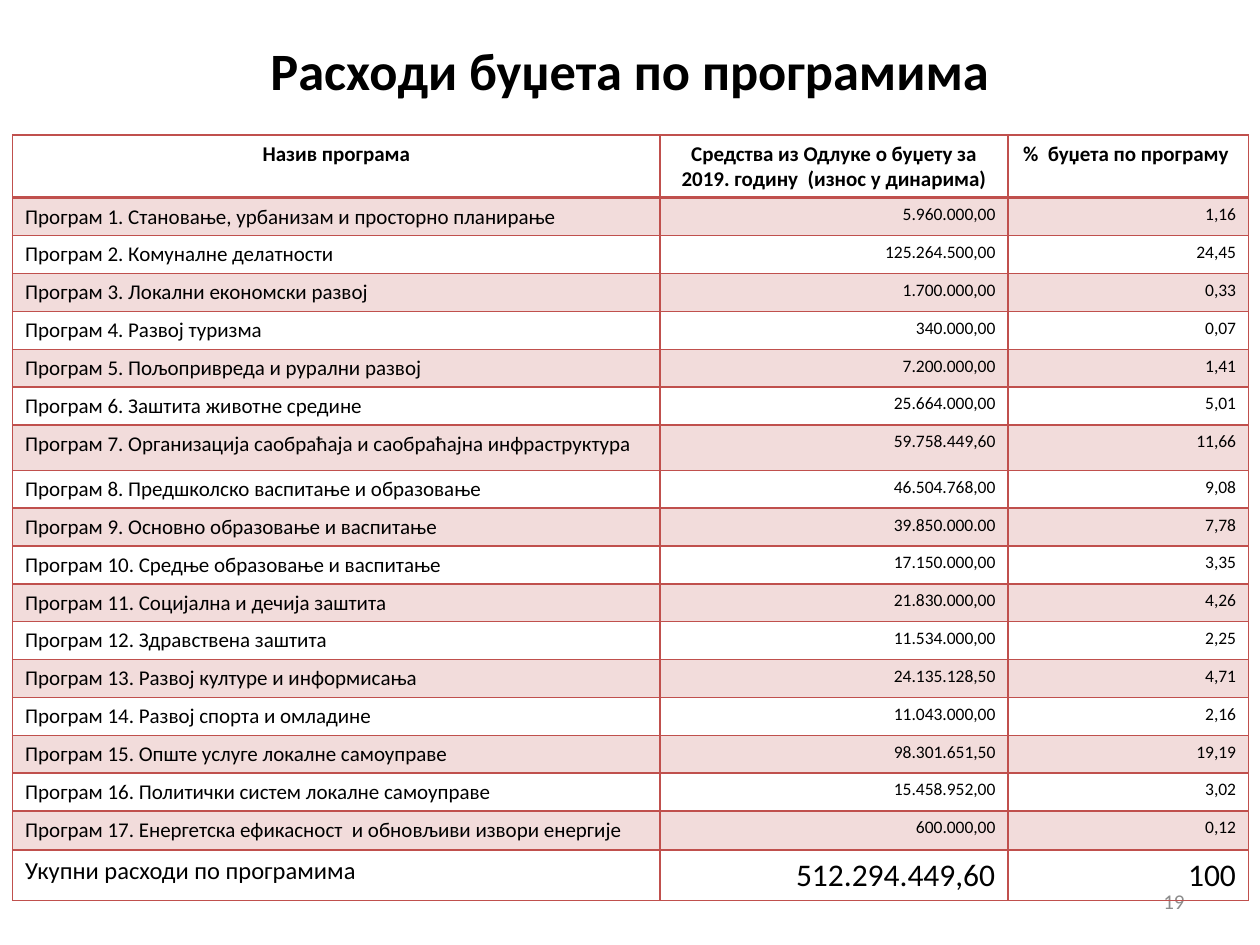
from lxml import etree
from pptx import Presentation
from pptx.dml.color import RGBColor
from pptx.enum.text import MSO_ANCHOR, PP_ALIGN
from pptx.oxml.ns import qn
from pptx.util import Inches, Pt

LEFT, CENTER, RIGHT = PP_ALIGN.LEFT, PP_ALIGN.CENTER, PP_ALIGN.RIGHT
MIDDLE = MSO_ANCHOR.MIDDLE
TITLE_ONLY = 5

FONT = "Calibri"
BLACK = RGBColor(0x00, 0x00, 0x00)
GRAY = RGBColor(0x8C, 0x8C, 0x8C)
RED = RGBColor(0xC0, 0x50, 0x4D)
BAND_OPACITY = 20

COLUMN_WIDTHS = (5.14, 2.76, 1.91)
ROW_HEIGHTS = [0.49] + [0.29] * 6 + [0.36] + [0.29] * 9 + [0.31, 0.39]

HEADINGS = (
    "Назив програма",
    "Средства из Одлуке о буџету за 2019. годину  (износ у динарима)",
    "%  буџета по програму ",
)
PROGRAMS = (
    ("Становање, урбанизам и просторно планирање", "5.960.000,00", "1,16"),
    ("Комуналне делатности", "125.264.500,00", "24,45"),
    ("Локални економски развој", "1.700.000,00", "0,33"),
    ("Развој туризма", "340.000,00", "0,07"),
    ("Пољопривреда и рурални развој", "7.200.000,00", "1,41"),
    ("Заштита животне средине", "25.664.000,00", "5,01"),
    ("Организација саобраћаја и саобраћајна инфраструктура", "59.758.449,60", "11,66"),
    ("Предшколско васпитање и образовање", "46.504.768,00", "9,08"),
    ("Основно образовање и васпитање", "39.850.000.00", "7,78"),
    ("Средње образовање и васпитање", "17.150.000,00", "3,35"),
    ("Социјална и дечија заштита", "21.830.000,00", "4,26"),
    ("Здравствена заштита", "11.534.000,00", "2,25"),
    ("Развој културе и информисања", "24.135.128,50", "4,71"),
    ("Развој спорта и омладине", "11.043.000,00", "2,16"),
    ("Опште услуге локалне самоуправе", "98.301.651,50", "19,19"),
    ("Политички систем локалне самоуправе", "15.458.952,00", "3,02"),
    ("Енергетска ефикасност  и обновљиви извори енергије", "600.000,00", "0,12"),
)
TOTALS = ("Укупни расходи по програмима", "512.294.449,60", "100")


def write_text(frame, text, size, align, color=BLACK, bold=False):
    """Fill a text frame with one formatted paragraph."""
    frame.text = text
    paragraph = frame.paragraphs[0]
    paragraph.alignment = align
    font = paragraph.font
    font.name, font.size, font.bold = FONT, Pt(size), bold
    font.color.rgb = color


def add_title(slide, text):
    """Place the slide heading in the title placeholder."""
    title = slide.shapes.title
    title.left, title.top = Inches(0.74), Inches(0.13)
    title.width, title.height = Inches(8.52), Inches(0.85)
    title.text_frame.vertical_anchor = MIDDLE
    write_text(title.text_frame, text, 30, CENTER, bold=True)


def add_page_number(slide, number):
    """Add the gray page number at the lower right."""
    box = slide.shapes.add_textbox(Inches(7.17), Inches(6.95), Inches(2.33), Inches(0.4))
    box.text_frame.word_wrap = True
    box.text_frame.vertical_anchor = MIDDLE
    write_text(box.text_frame, number, 12, RIGHT, GRAY)


def set_borders(cell, bottom=1, top=1):
    """Draw red lines around a cell, with widths in points."""
    properties = cell._tc.get_or_add_tcPr()
    for side, width in (("L", 1), ("R", 1), ("T", top), ("B", bottom)):
        line = etree.SubElement(properties, qn(f"a:ln{side}"), w=str(Pt(width)))
        fill = etree.SubElement(line, qn("a:solidFill"))
        etree.SubElement(fill, qn("a:srgbClr"), val=str(RED))


def set_fill(cell, banded):
    """Tint a banded cell and leave any other cell clear."""
    if not banded:
        cell.fill.background()
        return
    cell.fill.solid()
    cell.fill.fore_color.rgb = RED
    color = cell._tc.tcPr.find(qn("a:solidFill")).find(qn("a:srgbClr"))
    etree.SubElement(color, qn("a:alpha"), val=str(BAND_OPACITY * 1000))


def add_budget_table(slide):
    """Add the table of programs, amounts and shares."""
    programs = [
        (f"Програм {number}. {name}", amount, share)
        for number, (name, amount, share) in enumerate(PROGRAMS, 1)
    ]
    rows = [HEADINGS, *programs, TOTALS]
    last = len(rows) - 1
    table = slide.shapes.add_table(
        len(rows), len(HEADINGS), Inches(0.1), Inches(1.07),
        Inches(sum(COLUMN_WIDTHS)), Inches(sum(ROW_HEIGHTS)),
    ).table
    for column, width in zip(table.columns, COLUMN_WIDTHS):
        column.width = Inches(width)
    for index, (values, height) in enumerate(zip(rows, ROW_HEIGHTS)):
        table.rows[index].height = Inches(height)
        header = index == 0
        if header:
            sizes, aligns = (12, 12, 12), (CENTER, CENTER, CENTER)
        else:
            sizes = (14, 18, 18) if index == last else (12, 10, 10)
            aligns = (LEFT, RIGHT, RIGHT)
        for cell, value, size, align in zip(table.rows[index].cells, values, sizes, aligns):
            write_text(cell.text_frame, value, size, align, bold=header)
            set_borders(cell, bottom=2 if header else 1, top=2 if index == 1 else 1)
            set_fill(cell, index % 2 == 1)


def main():
    """Build and save the budget slide."""
    presentation = Presentation()
    presentation.slide_width, presentation.slide_height = Inches(10), Inches(7.5)
    slide = presentation.slides.add_slide(presentation.slide_layouts[TITLE_ONLY])
    add_title(slide, "Расходи буџета по програмима")
    add_page_number(slide, "19")
    add_budget_table(slide)
    presentation.save("out.pptx")


if __name__ == "__main__":
    main()
